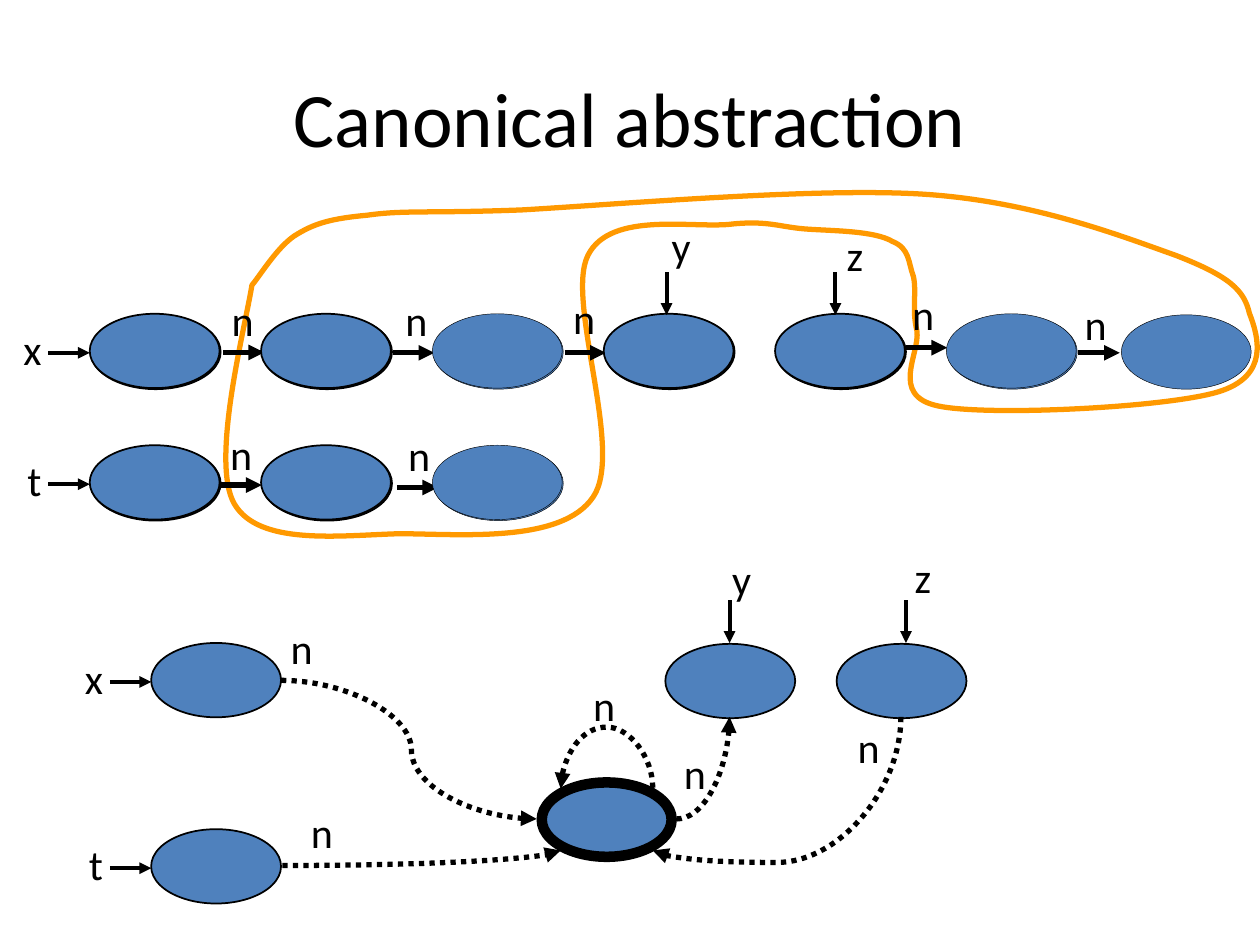
from dataclasses import dataclass

from lxml import etree
from pptx import Presentation
from pptx.dml.color import RGBColor
from pptx.enum.dml import MSO_LINE
from pptx.enum.shapes import MSO_CONNECTOR, MSO_SHAPE
from pptx.enum.text import MSO_ANCHOR, MSO_AUTO_SIZE, PP_ALIGN
from pptx.oxml.ns import qn
from pptx.util import Pt

STRAIGHT, CURVED = MSO_CONNECTOR.STRAIGHT, MSO_CONNECTOR.CURVE
ELLIPSE = MSO_SHAPE.OVAL
DOTTED = MSO_LINE.ROUND_DOT
CENTER, RIGHT = PP_ALIGN.CENTER, PP_ALIGN.RIGHT
MIDDLE = MSO_ANCHOR.MIDDLE
FIT_SHAPE = MSO_AUTO_SIZE.SHAPE_TO_FIT_TEXT


@dataclass(frozen=True)
class Theme:
    font: str = "Calibri"
    title_size: int = 44
    label_size: int = 24
    ink: RGBColor = RGBColor(0x00, 0x00, 0x00)
    node: RGBColor = RGBColor(0x4F, 0x81, 0xBD)
    group: RGBColor = RGBColor(0xFF, 0x99, 0x00)
    hairline: float = 0.25
    outline: float = 1
    pointer: float = 2.25
    edge: float = 3
    summary: float = 6


THEME = Theme()
NODE_W, NODE_H = 74.2, 42.5
NODE_MID = 22.3
ARROW = 23.6

# Start point, then two control points and an end point for each curve
GROUP_START = (144, 55)
GROUP_CURVES = [
    (140, 80), (120, 156), (134, 180), (148, 204), (194, 198), (228, 197),
    (261, 197), (321, 203), (339, 176), (357, 150), (323, 64), (336, 38),
    (349, 12), (397, 23), (419, 20), (440, 18), (446, 22), (462, 23),
    (477, 24), (500, 24), (510, 30), (520, 34), (519, 42), (522, 50),
    (524, 59), (521, 69), (524, 81), (526, 94), (508, 118), (536, 124),
    (564, 130), (666, 125), (696, 116), (726, 107), (719, 84), (714, 71),
    (711, 58), (703, 50), (672, 38), (641, 27), (590, 7), (528, 3),
    (466, -1), (351, 9), (298, 12), (245, 14), (231, 12), (210, 15),
    (188, 17), (179, 20), (168, 27), (158, 34), (149, 49), GROUP_START,
]


def add_text(slide, text, box, size, align):
    left, top, width, height = box
    frame = slide.shapes.add_textbox(Pt(left), Pt(top), Pt(width), Pt(height)).text_frame
    frame.word_wrap = True
    paragraph = frame.paragraphs[0]
    paragraph.text = text
    paragraph.alignment = align
    paragraph.font.name = THEME.font
    paragraph.font.size = Pt(size)
    paragraph.font.color.rgb = THEME.ink
    return frame


def add_label(slide, text, left, top, width=35.3, align=CENTER):
    frame = add_text(slide, text, (left, top, width, 36), THEME.label_size, align)
    frame.auto_size = FIT_SHAPE


def add_node(slide, left, top, weight):
    node = slide.shapes.add_shape(ELLIPSE, Pt(left), Pt(top), Pt(NODE_W), Pt(NODE_H))
    node.shadow.inherit = False
    node.fill.solid()
    node.fill.fore_color.rgb = THEME.node
    node.line.color.rgb = THEME.ink
    node.line.width = Pt(weight)


def add_arrow(slide, start, end, weight, kind=STRAIGHT, dash=None):
    arrow = slide.shapes.add_connector(kind, Pt(start[0]), Pt(start[1]), Pt(end[0]), Pt(end[1]))
    arrow.line.color.rgb = THEME.ink
    arrow.line.width = Pt(weight)
    if dash:
        arrow.line.dash_style = dash
    properties = arrow._element.spPr
    etree.SubElement(properties.find(qn("a:ln")), qn("a:tailEnd"), type="triangle")
    etree.SubElement(properties, qn("a:effectLst"))
    return arrow


def add_curve(slide, start, end, bend=None, downward=False):
    """Dotted curve: an S with its turn at bend, or a quarter turn without one.

    A downward curve leaves vertically, from upper right to lower left.
    """
    if downward:
        center_x, center_y = (start[0] + end[0]) / 2, (start[1] + end[1]) / 2
        half_w, half_h = (end[1] - start[1]) / 2, (start[0] - end[0]) / 2
        start = (center_x - half_w, center_y - half_h)
        end = (center_x + half_w, center_y + half_h)
    properties = add_arrow(slide, start, end, THEME.edge, CURVED, DOTTED)._element.spPr
    if downward:
        properties.find(qn("a:xfrm")).set("rot", "5400000")
    geometry = properties.find(qn("a:prstGeom"))
    if bend is None:
        geometry.set("prst", "curvedConnector2")
    else:
        etree.SubElement(geometry.find(qn("a:avLst")), qn("a:gd"),
                         name="adj1", fmla=f"val {round(bend * 100000)}")


def add_side_pointer(slide, name, node_left, node_top):
    """Variable name and arrow that lead into a node from its left."""
    add_label(slide, name, node_left - 50, node_top + 2, 29.5, RIGHT)
    middle = node_top + NODE_MID
    add_arrow(slide, (node_left - ARROW, middle), (node_left, middle), THEME.pointer)


def add_top_pointer(slide, name, label_left, label_top, tip_x, tip_y):
    """Variable name and arrow that lead into a node from above."""
    add_label(slide, name, label_left, label_top, 33.8, RIGHT)
    add_arrow(slide, (tip_x, tip_y - 24.3), (tip_x, tip_y), THEME.pointer)


def add_group_outline(slide, left, top):
    builder = slide.shapes.build_freeform(*GROUP_START, scale=Pt(1))
    builder.add_line_segments(GROUP_CURVES, close=True)
    outline = builder.convert_to_shape(Pt(left), Pt(top))
    outline.shadow.inherit = False
    outline.fill.background()
    outline.line.color.rgb = THEME.group
    outline.line.width = Pt(THEME.edge)
    # Turn every three line points into one Bézier curve
    segments = list(outline._element.iter(qn("a:lnTo")))
    for first in range(0, len(segments), 3):
        curve = etree.Element(qn("a:cubicBezTo"))
        segments[first].addprevious(curve)
        for segment in segments[first:first + 3]:
            curve.append(segment[0])
            segment.getparent().remove(segment)


def add_title(slide, left, top, width, height):
    frame = add_text(slide, "Canonical abstraction", (left, top, width, height),
                     THEME.title_size, CENTER)
    frame.vertical_anchor = MIDDLE


def add_concrete_heap(slide, left, top):
    """Two linked lists, with the nodes to be merged encircled."""
    first, pitch, upper, lower = left + 51.3, 97.9, top + 71.3, top + 146.4
    add_group_outline(slide, left, top)
    for x, y, label_x, label_y in [
        (127.4, 93.4, 121, 57), (224.6, 93.6, 220.3, 57), (322.6, 93.6, 316.1, 55.4),
        (517.7, 90.7, 509.8, 53.3), (616.3, 93.6, 608.4, 59),
        (126, 169.2, 120.2, 133.2), (226.8, 170.6, 221.8, 133.9),
    ]:
        add_arrow(slide, (left + x, top + y), (left + x + ARROW, top + y), THEME.edge)
        add_label(slide, "n", left + label_x, top + label_y)
    thin, normal = THEME.hairline, THEME.outline
    for y, weights in [(upper, (normal, normal, thin, normal, normal, thin)),
                       (lower, (normal, normal, thin))]:
        for column, weight in enumerate(weights):
            x = first + column * pitch
            for shift in (0.6, 0):
                add_node(slide, x + shift, y + shift, weight)
    add_node(slide, left + 640.8, upper + 0.6, thin)
    add_side_pointer(slide, "x", first, upper)
    add_side_pointer(slide, "t", first, lower)
    add_top_pointer(slide, "y", left + 367.9, top + 14.4, left + 380.9, top + 72)
    add_top_pointer(slide, "z", left + 466.6, top + 19.4, left + 477.4, top + 72)


def add_abstract_heap(slide, left, top):
    """The same lists with the encircled nodes merged into a summary node."""
    def at(x, y):
        return left + x, top + y

    for name, x, y in [("x", 50.4, 61.4), ("t", 50.4, 167.8)]:
        add_node(slide, *at(x, y), THEME.outline)
        add_side_pointer(slide, name, *at(x, y))
    for name, x, label_x, label_y, tip_x in [("y", 344.2, 366.5, 6.5, 380.9),
                                             ("z", 442.1, 469.4, 5.8, 481.7)]:
        add_node(slide, *at(x, 61.9), THEME.outline)
        add_top_pointer(slide, name, *at(label_x, label_y), *at(tip_x, 61.4))
    add_node(slide, *at(273.6, 141.1), THEME.summary)
    add_curve(slide, at(337, 144.2), at(284.4, 144.7), bend=-68, downward=True)
    add_curve(slide, at(478.8, 103.7), at(337, 180), bend=1.09, downward=True)
    add_curve(slide, at(124.6, 82.8), at(270.7, 162), bend=0.51)
    add_curve(slide, at(125.3, 188.6), at(284.4, 180))
    add_curve(slide, at(350.6, 162), at(380.9, 103.7))
    for x, y in [(118.8, 46.1), (442.8, 103), (130.3, 151.2), (291.6, 78.5), (343.4, 117.4)]:
        add_label(slide, "n", *at(x, y))


def main():
    deck = Presentation()
    deck.slide_width, deck.slide_height = Pt(720), Pt(540)
    slide = deck.slides.add_slide(deck.slide_layouts[6])
    add_title(slide, 36, 21.6, 648, 90)
    add_concrete_heap(slide, 0, 108)
    add_abstract_heap(slide, 36, 306)
    deck.save("out.pptx")


if __name__ == "__main__":
    main()
